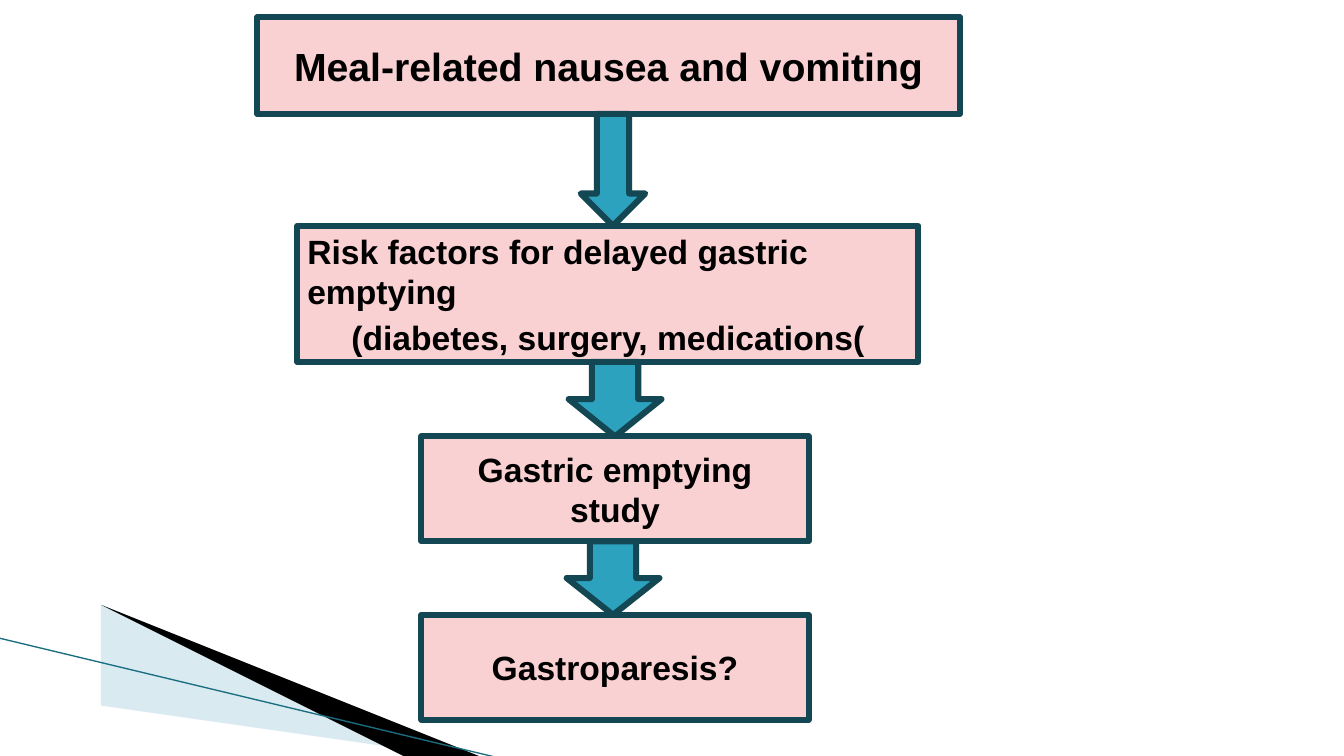
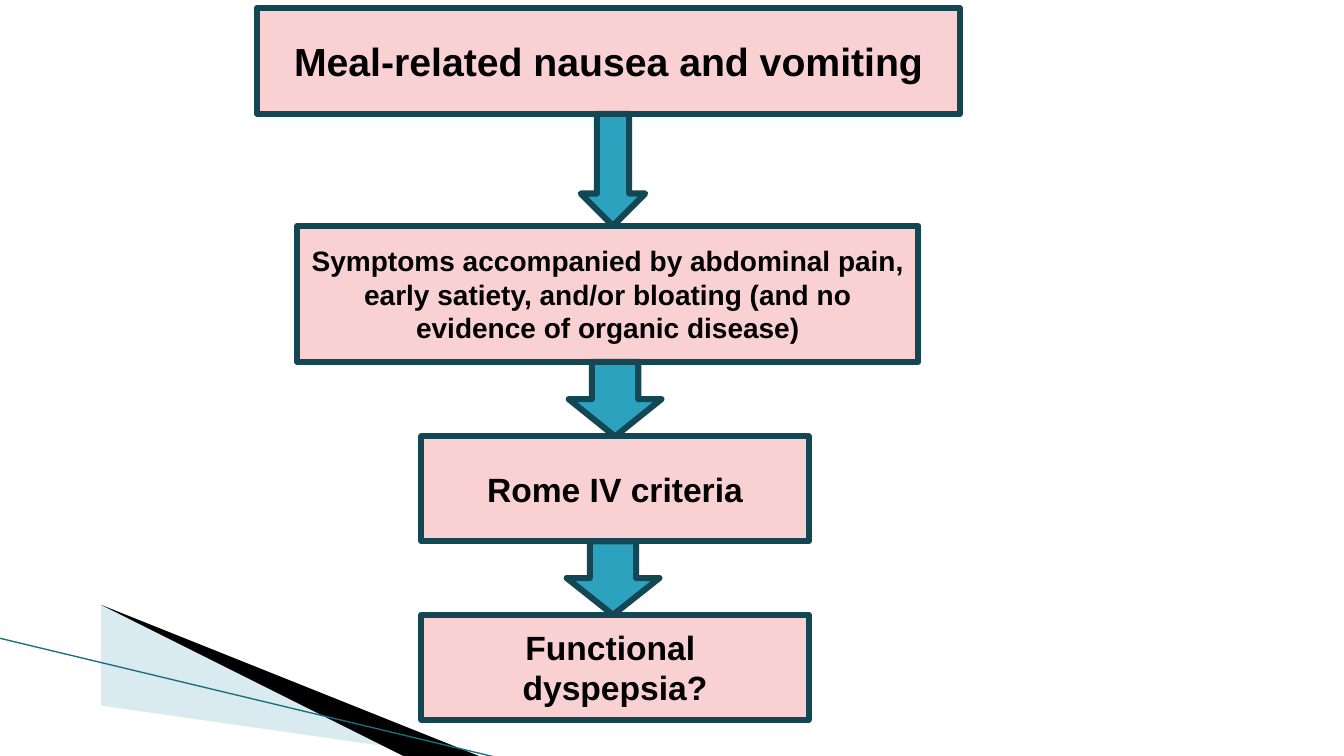
from lxml import etree
from pptx import Presentation
from pptx.dml.color import RGBColor
from pptx.enum.shapes import MSO_CONNECTOR, MSO_SHAPE
from pptx.enum.text import MSO_ANCHOR, MSO_AUTO_SIZE, PP_ALIGN
from pptx.oxml.ns import qn
from pptx.util import Inches, Pt

RECTANGLE, DOWN_ARROW = MSO_SHAPE.RECTANGLE, MSO_SHAPE.DOWN_ARROW
LEFT, CENTER = PP_ALIGN.LEFT, PP_ALIGN.CENTER
TITLE_ONLY = 5

COLORS = {
    "box": "F9D1D3",
    "arrow": "2DA2BF",
    "outline": "144754",
    "text": "000000",
    "pale_band": "A0CBDC",
    "dark_band": "000000",
    "band_edge": "1A6E80",
}
FONT = "Arial"
OUTLINE_WIDTH = 4.33

# Each step: list of (paragraph, alignment), text size, space before
HEADING = ([("Meal-related nausea and vomiting", CENTER)], 28, 0)
FLOWS = [
    {
        "heading_top": 0.17,
        "steps": [
            HEADING,
            ([("Risk factors for delayed gastric emptying ", LEFT),
              ("(diabetes, surgery, medications(", CENTER)], 24, 4),
            ([("Gastric emptying study", CENTER)], 24, 0),
            ([("Gastroparesis?", CENTER)], 24, 0),
        ],
    },
    {
        "heading_top": 0.08,
        "steps": [
            HEADING,
            ([("Symptoms accompanied by abdominal pain, early satiety, and/or "
               "bloating (and no evidence of organic disease)", CENTER)], 20, 4),
            ([("Rome IV criteria", CENTER)], 24, 0),
            ([("Functional ", CENTER), ("dyspepsia?", CENTER)], 24, 0),
        ],
    },
]

# Left, top, width and bottom of each box; the heading's top varies by slide
BOXES = [
    (2.55, None, 6.97, 1.13),
    (2.95, 2.24, 6.16, 3.59),
    (4.18, 4.33, 3.84, 5.37),
    (4.18, 6.1, 3.84, 7.14),
]
# Centre and width of the arrow below each box but the last
ARROWS = [(6.08, 0.64), (6.1, 0.92), (6.08, 0.92)]

BANDS = [
    ("pale_band", 40, [(0.73, 6.51), (7.93, 7.51), (6.08, 7.51), (0.73, 6.5)]),
    ("dark_band", 100, [(0.71, 6.49), (6.09, 7.51), (4.96, 7.52), (0.72, 6.5)]),
]
BAND_EDGE = (-0.01, 6.33, 4.95, 7.52)


def color(name):
    return RGBColor.from_string(COLORS[name])


def place(shape, left, top, width, height):
    shape.left, shape.top = Inches(left), Inches(top)
    shape.width, shape.height = Inches(width), Inches(height)


def paint(shape, fill):
    shape.fill.solid()
    shape.fill.fore_color.rgb = color(fill)
    shape.line.color.rgb = color("outline")
    shape.line.width = Pt(OUTLINE_WIDTH)


def write(shape, paragraphs, size, space_before):
    frame = shape.text_frame
    frame.text = "\n".join(text for text, _ in paragraphs)
    frame.word_wrap = True
    frame.auto_size = MSO_AUTO_SIZE.NONE
    frame.vertical_anchor = MSO_ANCHOR.MIDDLE
    for para, (_, alignment) in zip(frame.paragraphs, paragraphs):
        para.alignment = alignment
        para.space_before = Pt(space_before)
        font = para.runs[0].font
        font.name, font.size, font.bold = FONT, Pt(size), True
        font.color.rgb = color("text")


def add_shape(page, kind):
    shape = page.shapes.add_shape(kind, 0, 0, 0, 0)
    shape.shadow.inherit = False
    return shape


def decorate_layout(layout, page):
    """Draw the corner bands on a page, then move them to its layout."""
    for name, opacity, points in BANDS:
        builder = page.shapes.build_freeform(*points[0], scale=Inches(1))
        builder.add_line_segments(points[1:], close=True)
        band = builder.convert_to_shape()
        band.shadow.inherit = False
        band.fill.solid()
        band.fill.fore_color.rgb = color(name)
        band.line.fill.background()
        if opacity < 100:
            tint = band.element.spPr.find(qn("a:solidFill"))[0]
            etree.SubElement(tint, qn("a:alpha"), val=str(opacity * 1000))
        layout.shapes.element.append(band.element)

    edge = page.shapes.add_connector(
        MSO_CONNECTOR.STRAIGHT, *(Inches(value) for value in BAND_EDGE))
    edge.line.color.rgb = color("band_edge")
    edge.line.width = Pt(0.95)
    etree.SubElement(edge.element.spPr, qn("a:effectLst"))
    layout.shapes.element.append(edge.element)


def draw_flow(page, flow):
    tops = [flow["heading_top"]] + [box[1] for box in BOXES[1:]]
    for index, (left, _, width, bottom) in enumerate(BOXES):
        box = add_shape(page, RECTANGLE) if index else page.shapes.title
        place(box, left, tops[index], width, bottom - tops[index])
        paint(box, "box")
        write(box, *flow["steps"][index])
        if index < len(ARROWS):
            center, arrow_width = ARROWS[index]
            arrow = add_shape(page, DOWN_ARROW)
            place(arrow, center - arrow_width / 2, bottom,
                  arrow_width, tops[index + 1] - bottom)
            paint(arrow, "arrow")


def main():
    deck = Presentation()
    deck.slide_width, deck.slide_height = Inches(13.33), Inches(7.5)
    layout = deck.slide_layouts[TITLE_ONLY]
    pages = [deck.slides.add_slide(layout) for _ in FLOWS]
    decorate_layout(layout, pages[0])
    for page, flow in zip(pages, FLOWS):
        draw_flow(page, flow)
    deck.save("out.pptx")


if __name__ == "__main__":
    main()
